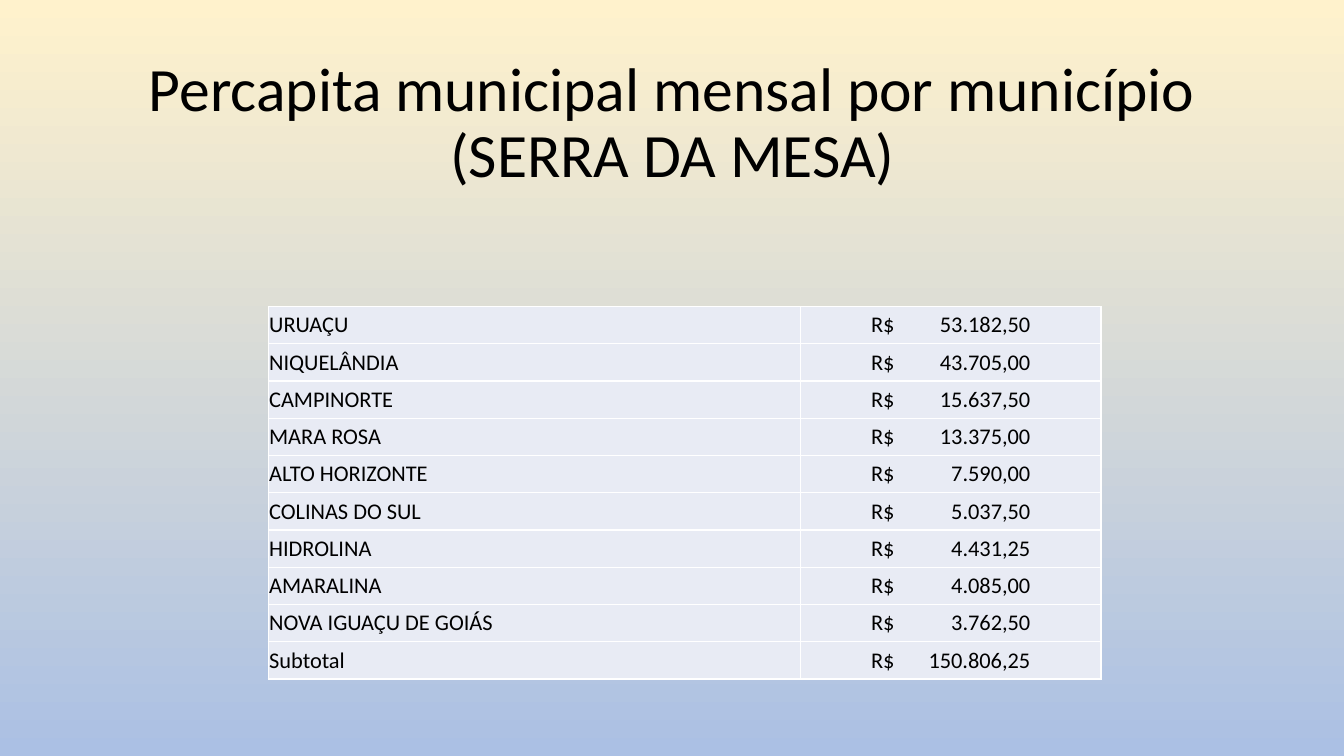
from lxml import etree
from pptx import Presentation, util as u
from pptx.dml.color import RGBColor
from pptx.enum import text
from pptx.oxml import ns

WIDTH, HEIGHT = u.Inches(13.33), u.Inches(7.5)
INK, CELL, GRID = "000000", "E8EBF4", "FFFFFF"


def colour(hex_code):
    return RGBColor.from_string(hex_code)


def add_text(paragraph, wording, size):
    run = paragraph.add_run()
    run.text = wording
    run.font.size = u.Pt(size)
    run.font.name = "Calibri"
    run.font.color.rgb = colour(INK)


deck = Presentation()
deck.slide_width, deck.slide_height = WIDTH, HEIGHT
slide = deck.slides.add_slide(deck.slide_layouts[6])

# Background: cream at the top, blue at the bottom
backdrop = slide.background.fill
backdrop.gradient()
backdrop.gradient_angle = 270
for stop, hex_code in zip(backdrop.gradient_stops, ("FFF2CC", "ABC0E4")):
    stop.color.rgb = colour(hex_code)

# Title
title = slide.shapes.add_textbox(
    u.Inches(1.06), u.Inches(0.4), u.Inches(11.22), u.Inches(1.67)).text_frame
title.word_wrap = True
title.vertical_anchor = text.MSO_ANCHOR.MIDDLE
heading = title.paragraphs[0]
heading.alignment = text.PP_ALIGN.CENTER
heading.line_spacing = 0.9
add_text(heading, "Percapita municipal mensal por município (SERRA DA MESA)", 44)

# Monthly amount per municipality
amounts = [
    ("URUAÇU", "53.182,50"),
    ("NIQUELÂNDIA", "43.705,00"),
    ("CAMPINORTE", "15.637,50"),
    ("MARA ROSA", "13.375,00"),
    ("ALTO HORIZONTE", "7.590,00"),
    ("COLINAS DO SUL", "5.037,50"),
    ("HIDROLINA", "4.431,25"),
    ("AMARALINA", "4.085,00"),
    ("NOVA IGUAÇU DE GOIÁS", "3.762,50"),
    ("Subtotal", "150.806,25"),
]
column_widths = (u.Inches(5.28), u.Inches(2.98))
row_height = u.Inches(0.37)
table = slide.shapes.add_table(
    len(amounts), 2, u.Inches(2.66), u.Inches(3.04),
    sum(column_widths), row_height * len(amounts)).table
table.first_row = table.horz_banding = False
for column, width in zip(table.columns, column_widths):
    column.width = width

for row, (municipality, amount) in enumerate(amounts):
    table.rows[row].height = row_height
    for col, wording in enumerate((municipality, f"R$\t{amount}")):
        cell = table.cell(row, col)
        cell.vertical_anchor = text.MSO_ANCHOR.MIDDLE
        cell.margin_left = u.Inches((0.01, 0.7)[col])
        cell.margin_right = u.Inches(0.01)
        paragraph = cell.text_frame.paragraphs[0]
        add_text(paragraph, wording, 16)

        # Amounts line up on a right-hand tab stop
        if col == 1:
            tabs = etree.SubElement(paragraph._p.get_or_add_pPr(), ns.qn("a:tabLst"))
            etree.SubElement(tabs, ns.qn("a:tab"), pos=str(u.Inches(1.58)), algn="r")

        # Cell borders come before the fill in the cell properties
        properties = cell._tc.get_or_add_tcPr()
        for side in ("lnL", "lnR", "lnT", "lnB"):
            border = etree.SubElement(properties, ns.qn(f"a:{side}"), w=str(u.Pt(0.96)))
            border_fill = etree.SubElement(border, ns.qn("a:solidFill"))
            etree.SubElement(border_fill, ns.qn("a:srgbClr"), val=GRID)
        cell.fill.solid()
        cell.fill.fore_color.rgb = colour(CELL)

deck.save("out.pptx")
